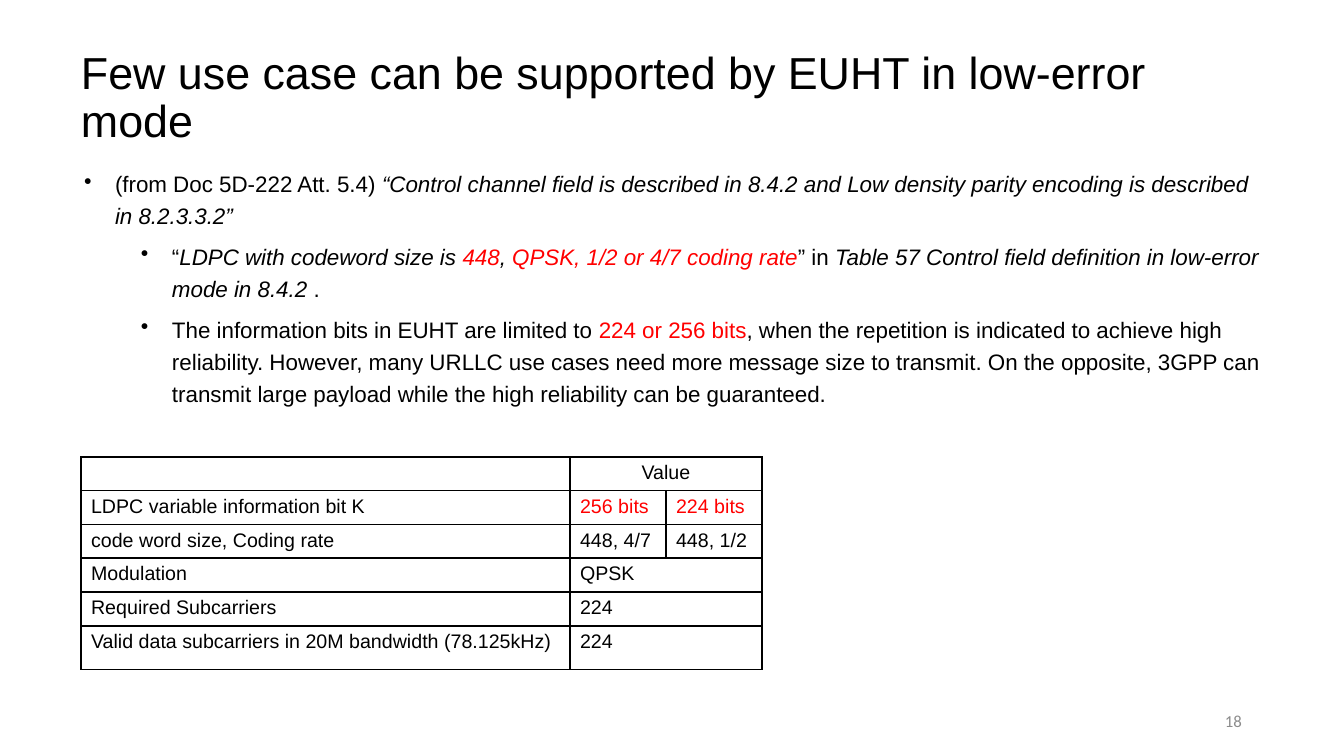
"""Builds the slide on EUHT use cases in low-error mode."""
from lxml import etree
from pptx import Presentation
from pptx.dml.color import RGBColor
from pptx.enum.text import MSO_ANCHOR, PP_ALIGN
from pptx.oxml.ns import qn
from pptx.util import Emu, Pt

BLACK = RGBColor(0, 0, 0)
RED = RGBColor(255, 0, 0)
GRAY = RGBColor(140, 140, 140)
CENTER, RIGHT = PP_ALIGN.CENTER, PP_ALIGN.RIGHT
MIDDLE = MSO_ANCHOR.MIDDLE
PX_PER_INCH = 100.8


def px(length):
    return Emu(round(length * 914400 / PX_PER_INCH))


def add_text_frame(left, top, width, height):
    frame = slide.shapes.add_textbox(px(left), px(top), px(width), px(height)).text_frame
    frame.word_wrap = True
    frame.margin_left = frame.margin_right = frame.margin_top = frame.margin_bottom = 0
    return frame


prs = Presentation()
prs.slide_width, prs.slide_height = px(1344), px(756)
slide = prs.slides.add_slide(prs.slide_layouts[6])

title = add_text_frame(81, 50, 1183, 110).paragraphs[0]
title.text = "Few use case can be supported by EUHT in low-error mode"
title.line_spacing = Pt(34.3)
title.font.size, title.font.name, title.font.color.rgb = Pt(32), "Arial", BLACK

points = [
    (0, [("(from Doc 5D-222 Att. 5.4) ", False, BLACK),
         ("“Control channel field is described in 8.4.2 and Low density parity "
          "encoding is described in 8.2.3.3.2”", True, BLACK)]),
    (1, [("“", False, BLACK),
         ("LDPC with codeword size is ", True, BLACK),
         ("448", True, RED),
         (", ", True, BLACK),
         ("QPSK, 1/2 or 4/7 coding rate", True, RED),
         ("” in ", False, BLACK),
         ("Table 57 Control field definition in low-error mode in 8.4.2 ", True, BLACK),
         (".", False, BLACK)]),
    (1, [("The information bits in EUHT are limited to ", False, BLACK),
         ("224 or 256 bits", False, RED),
         (", when the repetition is indicated to achieve high reliability. However, "
          "many URLLC use cases need more message size to transmit. On the opposite, "
          "3GPP can transmit large payload while the high reliability can be "
          "guaranteed.", False, BLACK)]),
]
body = add_text_frame(82, 165, 1182, 260)
for index, (level, pieces) in enumerate(points):
    point = body.paragraphs[0] if index == 0 else body.add_paragraph()
    point.level = level
    point.line_spacing = 1.2
    point.space_before = Pt(6)
    point.font.size, point.font.name = Pt(16), "Arial"
    properties = point._p.get_or_add_pPr()
    properties.set("marL", str(px(33 + 57 * level)))
    properties.set("indent", str(px(-31)))
    bullet = etree.Element(qn("a:buChar"), char="•")
    properties.find(qn("a:defRPr")).addprevious(bullet)
    for text, italic, color in pieces:
        run = point.add_run()
        run.text = text
        run.font.italic, run.font.color.rgb = italic, color

rows = [
    ("", "Value", None),
    ("LDPC variable information bit K", "256 bits", "224 bits"),
    ("code word size, Coding rate", "448, 4/7", "448, 1/2"),
    ("Modulation", "QPSK", None),
    ("Required Subcarriers", "224", None),
    ("Valid data subcarriers in 20M bandwidth (78.125kHz)", "224", None),
]
column_widths = [489, 96, 96]
row_heights = [33, 32, 33, 34, 34, 44]
parameters = slide.shapes.add_table(
    len(rows), 3, px(81), px(457), px(sum(column_widths)), px(sum(row_heights))).table
parameters.first_row = parameters.horz_banding = False
for column, width in zip(parameters.columns, column_widths):
    column.width = px(width)
for r, (row, height) in enumerate(zip(rows, row_heights)):
    parameters.rows[r].height = px(height)
    for c, value in enumerate(row):
        cell = parameters.cell(r, c)
        entry = cell.text_frame.paragraphs[0]
        if value:
            entry.text = value
        entry.font.size, entry.font.name = Pt(14), "Arial"
        entry.font.color.rgb = RED if r == 1 and c > 0 else BLACK
        if r == 0:
            entry.alignment = CENTER
        for side in ("a:lnL", "a:lnR", "a:lnT", "a:lnB"):
            border = etree.SubElement(cell._tc.get_or_add_tcPr(), qn(side), w=str(Pt(1)))
            paint = etree.SubElement(border, qn("a:solidFill"))
            etree.SubElement(paint, qn("a:srgbClr"), val=str(BLACK))
        cell.fill.background()
    if row[2] is None:
        parameters.cell(r, 1).merge(parameters.cell(r, 2))

footer = add_text_frame(950, 701, 292, 40)
footer.vertical_anchor = MIDDLE
page_number = footer.paragraphs[0]
page_number.text = "18"
page_number.alignment = RIGHT
page_number.font.size, page_number.font.name, page_number.font.color.rgb = Pt(12), "Calibri", GRAY

prs.save("out.pptx")
